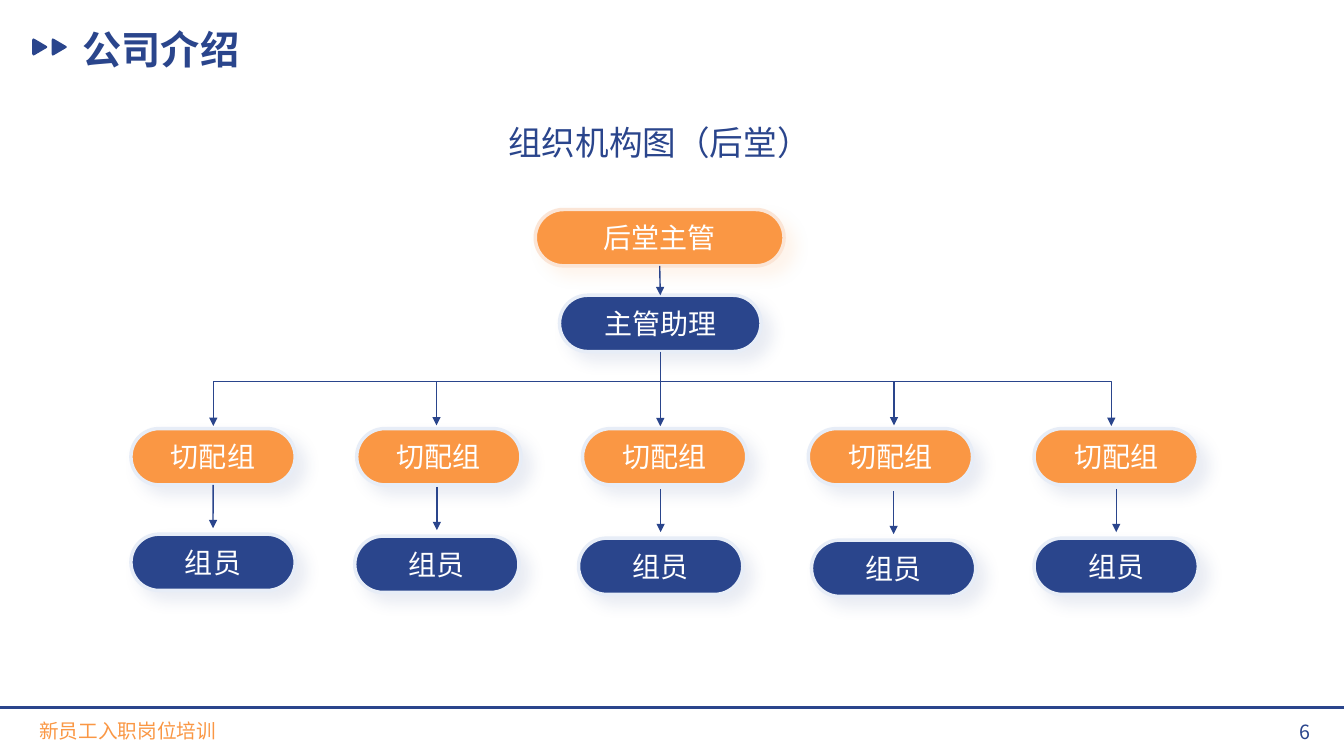
"""Build the kitchen organisation chart slide."""
from dataclasses import dataclass

from pptx import Presentation
from pptx import util as u
from pptx.dml.color import RGBColor
from pptx.enum import shapes, text
from pptx.oxml import ns
from pptx.oxml.xmlchemy import OxmlElement

FONT = "Noto Sans CJK SC"
BLUE, ORANGE, WHITE = "2A458C", "FA9744", "FFFFFF"
PALE_BLUE, PALE_ORANGE = "E7EDF7", "FBE5D6"
PILL_HEIGHT = 1.42
GROUP_LEFT, GROUP_STEP, GROUP_TOP, GROUP_WIDTH = 3.3, 5.69, 10.8, 4.14
TRUNK_X, BRANCH_Y = 16.64, 9.63


@dataclass
class Pill:
    label: str
    left: float
    top: float
    width: float
    fill: str
    border: str = PALE_BLUE
    shadow: str = BLUE


@dataclass
class Label:
    words: str
    left: float
    top: float
    width: float
    height: float
    size: int
    colour: str = BLUE
    align: text.PP_ALIGN = text.PP_ALIGN.LEFT
    bold: bool = False


SUPERVISOR = Pill("后堂主管", 13.49, 5.28, 6.27, ORANGE, PALE_ORANGE, ORANGE)
ASSISTANT = Pill("主管助理", 14.1, 7.44, 5.08, BLUE)
GROUPS = [Pill("切配组", GROUP_LEFT + GROUP_STEP * column, GROUP_TOP, GROUP_WIDTH, ORANGE)
          for column in range(5)]
MEMBERS = [Pill("组员", left, top, GROUP_WIDTH, BLUE)
           for left, top in [(3.3, 13.46), (8.94, 13.51), (14.58, 13.56),
                             (20.45, 13.61), (26.06, 13.56)]]
TITLE = Label("公司介绍", 1.83, 0.51, 4.8, 1.45, 28, bold=True)
LABELS = [
    Label("组织机构图（后堂）", 8.15, 2.95, 16.94, 1.27, 24, align=text.PP_ALIGN.CENTER),
    Label("新员工入职岗位培训", 0.74, 17.98, 5.31, 0.86, 14, ORANGE),
    Label("6", 32.21, 18.01, 1.35, 1.02, 14, align=text.PP_ALIGN.CENTER),
]
TRIANGLE_POINTS = [(0, 5), (1, 2), (3, 0), (6, 1), (35, 18), (38, 20), (38, 23),
                   (35, 25), (6, 42), (3, 43), (1, 41), (0, 38)]


def rgb(colour: str) -> RGBColor:
    """Turn a hex string into a colour."""
    return RGBColor.from_string(colour)


def add_child(parent, tag: str, **attributes):
    """Append an XML element with the given attributes."""
    child = OxmlElement(tag)
    for name, value in attributes.items():
        child.set(name, str(value))
    parent.append(child)
    return child


def write(shape, words: str, size: int, colour: str, align, bold: bool = False) -> None:
    """Put one formatted line of text into a shape."""
    frame = shape.text_frame
    frame.text = words
    frame.word_wrap = True
    frame.auto_size = text.MSO_AUTO_SIZE.NONE
    paragraph = frame.paragraphs[0]
    paragraph.alignment = align
    font = paragraph.runs[0].font
    font.name, font.size, font.bold = FONT, u.Pt(size), bold
    font.color.rgb = rgb(colour)
    add_child(paragraph.runs[0].font._element, "a:ea", typeface=FONT)


def place_label(shape, label: Label) -> None:
    """Position a text shape and fill it from its label."""
    shape.left, shape.top = u.Cm(label.left), u.Cm(label.top)
    shape.width, shape.height = u.Cm(label.width), u.Cm(label.height)
    write(shape, label.words, label.size, label.colour, label.align, label.bold)
    shape.text_frame.vertical_anchor = text.MSO_ANCHOR.TOP


def add_pill(slide, pill: Pill):
    """Draw a rounded box with a soft shadow and a centred label."""
    shape = slide.shapes.add_shape(
        shapes.MSO_SHAPE.ROUNDED_RECTANGLE, u.Cm(pill.left), u.Cm(pill.top),
        u.Cm(pill.width), u.Cm(PILL_HEIGHT))
    shape.adjustments[0] = 0.5
    shape.fill.solid()
    shape.fill.fore_color.rgb = rgb(pill.fill)
    shape.line.color.rgb = rgb(pill.border)
    shape.line.width = u.Pt(2.5)
    shape.shadow.inherit = False
    effects = shape.element.spPr.find(ns.qn("a:effectLst"))
    outer = add_child(effects, "a:outerShdw", blurRad=u.Pt(11), dist=u.Pt(9),
                      dir=45 * 60000, algn="tl", rotWithShape=0)
    add_child(add_child(outer, "a:srgbClr", val=pill.shadow), "a:alpha", val=9000)
    write(shape, pill.label, 20, WHITE, text.PP_ALIGN.CENTER)
    shape.text_frame.vertical_anchor = text.MSO_ANCHOR.MIDDLE
    return shape


def style_line(shape, width: float, *arrow_ends: str) -> None:
    """Give an outline its colour, width and arrowheads."""
    shape.line.color.rgb = rgb(BLUE)
    shape.line.width = u.Pt(width)
    outline = shape.element.spPr.find(ns.qn("a:ln"))
    for end in arrow_ends:
        add_child(outline, end, type="triangle")


def add_line(slide, x1: float, y1: float, x2: float, y2: float,
             width: float = 1, arrow: bool = True):
    """Draw a straight connector, with an arrowhead by default."""
    connector = slide.shapes.add_connector(
        shapes.MSO_CONNECTOR.STRAIGHT, u.Cm(x1), u.Cm(y1), u.Cm(x2), u.Cm(y2))
    style_line(connector, width, *(["a:tailEnd"] if arrow else []))
    add_child(connector.element.spPr, "a:effectLst")
    return connector


def add_bracket(slide) -> None:
    """Draw the branch line that reaches the two outer groups."""
    bracket = slide.shapes.add_shape(
        shapes.MSO_SHAPE.LEFT_BRACKET, u.Cm(16.13), u.Cm(-1.14), u.Cm(1.12), u.Cm(22.63))
    bracket.rotation = 90
    bracket.adjustments[0] = 0
    bracket.fill.background()
    style_line(bracket, 1, "a:headEnd", "a:tailEnd")
    bracket.shadow.inherit = False


def add_triangle(slide, left: float) -> None:
    """Draw one rounded triangle beside the title."""
    builder = slide.shapes.build_freeform(*TRIANGLE_POINTS[0], scale=float(u.Cm(0.01)))
    builder.add_line_segments(TRIANGLE_POINTS[1:], close=True)
    triangle = builder.convert_to_shape(u.Cm(left), u.Cm(0.97))
    triangle.fill.solid()
    triangle.fill.fore_color.rgb = rgb(BLUE)
    triangle.line.fill.background()
    triangle.shadow.inherit = False


def add_chart_tree(slide) -> None:
    """Draw the boxes and arrows of the organisation chart."""
    supervisor, assistant = add_pill(slide, SUPERVISOR), add_pill(slide, ASSISTANT)
    command = add_line(slide, TRUNK_X, 6.7, TRUNK_X, 7.44)
    command.begin_connect(supervisor, 2)
    command.end_connect(assistant, 0)
    trunk = add_line(slide, TRUNK_X, 8.86, TRUNK_X, 10.74)
    trunk.begin_connect(assistant, 2)
    add_bracket(slide)
    for x in (11, 22.53):
        add_line(slide, x, BRANCH_Y, x, 10.72)
    groups = [add_pill(slide, group) for group in GROUPS]
    arrows = []
    for member in MEMBERS:
        centre = member.left + member.width / 2
        arrows.append(add_line(slide, centre, member.top - 1.24, centre, member.top - 0.15))
        add_pill(slide, member)
    arrows[0].begin_connect(groups[0], 2)


def main() -> None:
    """Create the presentation and save it."""
    presentation = Presentation()
    presentation.slide_width, presentation.slide_height = u.Cm(33.87), u.Cm(19.05)
    slide = presentation.slides.add_slide(presentation.slide_layouts[5])
    add_line(slide, 0, 17.83, 33.87, 17.83, width=2.5, arrow=False)
    for left in (0.81, 1.3):
        add_triangle(slide, left)
    place_label(slide.shapes.title, TITLE)
    for label in LABELS:
        place_label(slide.shapes.add_textbox(0, 0, 0, 0), label)
    add_chart_tree(slide)
    presentation.save("out.pptx")


if __name__ == "__main__":
    main()
